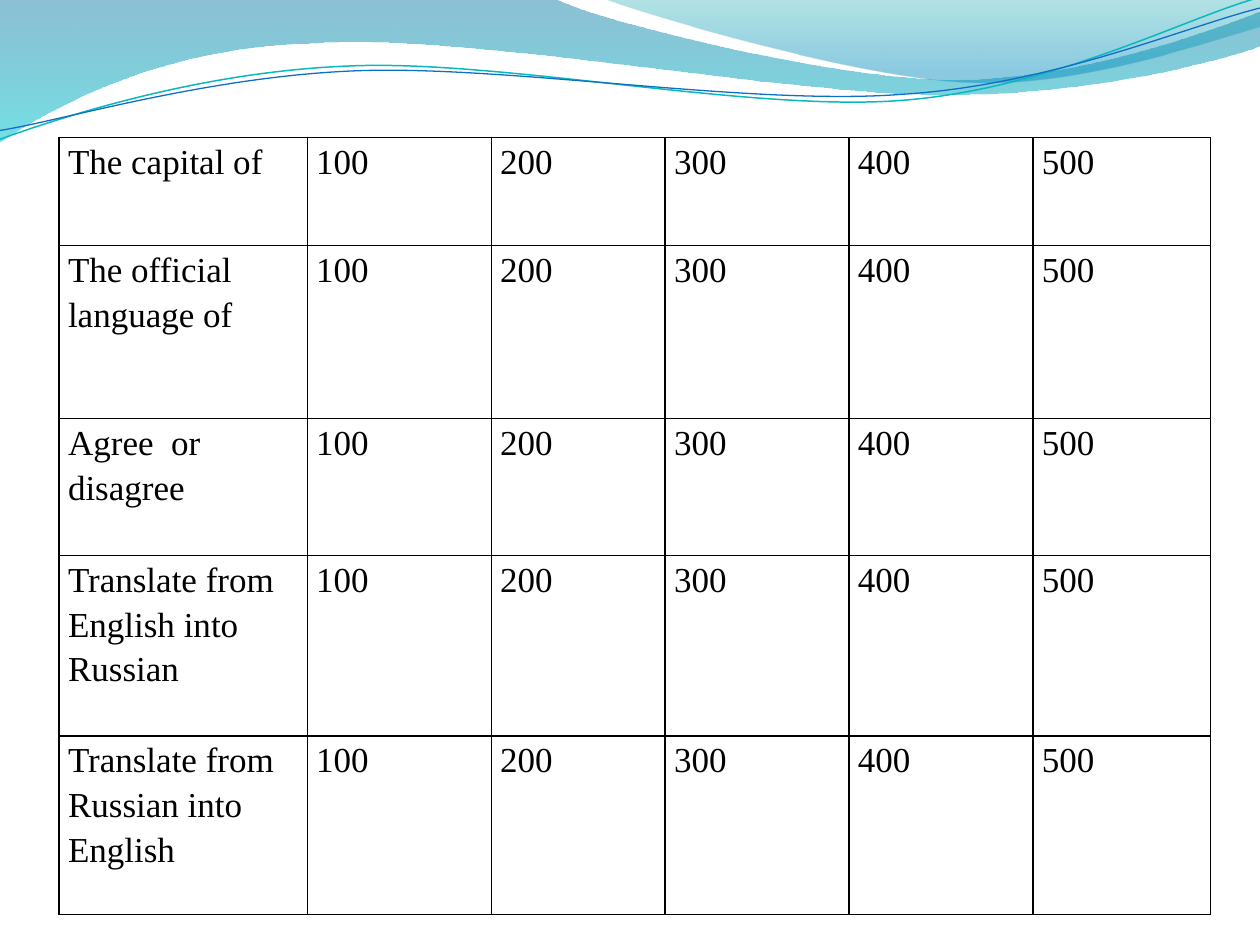
"""Build a quiz board slide with a table of points under a wave banner."""
from dataclasses import dataclass
from typing import Optional

import lxml.etree
import pptx
import pptx.dml.color
import pptx.oxml.ns
import pptx.util

Inches = pptx.util.Inches
RGBColor = pptx.dml.color.RGBColor
qn = pptx.oxml.ns.qn
Point = tuple[float, float]

BLACK = RGBColor(0x00, 0x00, 0x00)
DEEP_BLUE = RGBColor(0x00, 0x74, 0xA1)
CYAN = RGBColor(0x00, 0xC6, 0xCF)
TEAL = RGBColor(0x00, 0xA1, 0xA9)
SKY_BLUE = RGBColor(0x00, 0x8B, 0xBF)
LINE_TEAL = RGBColor(0x0A, 0xB8, 0xBF)
LINE_BLUE = RGBColor(0x0F, 0x6F, 0xC6)
BORDER = RGBColor(0x00, 0x00, 0x01)

FONT = "Times New Roman"
LINE_ROTATION = 357.3
TOPICS = (
    "The capital of",
    "The official language of",
    "Agree  or disagree",
    "Translate from English into Russian",
    "Translate from Russian into English",
)
POINTS = ("100", "200", "300", "400", "500")
COLUMN_WIDTHS = (1.97, 1.46, 1.38, 1.46, 1.46, 1.41)
ROW_HEIGHTS = (0.86, 1.37, 1.09, 1.43, 1.42)


@dataclass(frozen=True)
class Stop:
    position: float
    color: RGBColor
    opacity: int


@dataclass(frozen=True)
class Wave:
    """Segments hold one point for a straight line or three for a Bezier curve."""
    start: Point
    segments: tuple[tuple[Point, ...], ...]
    stops: tuple[Stop, ...] = ()
    line_color: Optional[RGBColor] = None
    line_width: float = 0


WAVES = (
    Wave(
        (0, 0),
        (
            ((4.4, -0.01),),
            ((4.76, 0.17), (6.64, 0.63), (7.58, 0.63)),
            ((8.53, 0.63), (9.58, 0.26), (10, 0.09)),
            ((10.01, 0.36),),
            ((9.83, 0.44), (8.7, 0.76), (7.46, 0.75)),
            ((6.22, 0.75), (3.82, 0.28), (2.57, 0.34)),
            ((1.29, 0.36), (0.46, 0.83), (-0.01, 1.13)),
            ((0, 0),),
        ),
        stops=(Stop(0, DEEP_BLUE, 45), Stop(1, CYAN, 55)),
    ),
    Wave(
        (4.79, -0.01),
        (
            ((5.09, 0.11), (6.82, 0.62), (7.69, 0.65)),
            ((8.56, 0.69), (9.61, 0.32), (10, 0.21)),
            ((10, 0),),
            ((4.79, -0.01),),
        ),
        stops=(Stop(0, TEAL, 30), Stop(0.8, SKY_BLUE, 45)),
    ),
    Wave(
        (-0.02, 0.87),
        (
            ((0.47, 0.72), (1.58, 0.41), (2.77, 0.42)),
            ((3.96, 0.42), (5.91, 0.93), (7.12, 0.9)),
            ((8.32, 0.87), (9.4, 0.36), (10, 0.22)),
        ),
        line_color=LINE_TEAL,
        line_width=0.85,
    ),
    Wave(
        (-0.02, 0.8),
        (
            ((0.46, 0.75), (1.64, 0.45), (2.83, 0.46)),
            ((4.03, 0.47), (5.96, 0.89), (7.16, 0.85)),
            ((8.35, 0.83), (9.42, 0.42), (10.02, 0.3)),
        ),
        line_color=LINE_BLUE,
        line_width=0.75,
    ),
)


def bend_segments(shape, wave: Wave) -> None:
    """Join the straight steps of each three-point segment into one curve."""
    steps = iter(list(shape._element.iter(qn("a:lnTo"))))
    for segment in wave.segments:
        first, *others = [next(steps) for _ in segment]
        if others:
            first.tag = qn("a:cubicBezTo")
        for other in others:
            first.append(other[0])
            other.getparent().remove(other)


def draw_wave(slide, wave: Wave) -> None:
    """Draw a gradient band or an open line."""
    points = [(Inches(x), Inches(y)) for segment in wave.segments for x, y in segment]
    builder = slide.shapes.build_freeform(*map(Inches, wave.start))
    builder.add_line_segments(points, close=bool(wave.stops))
    shape = builder.convert_to_shape()
    bend_segments(shape, wave)
    shape.shadow.inherit = False
    if not wave.stops:
        shape.rotation = LINE_ROTATION
        shape.fill.background()
        shape.line.color.rgb = wave.line_color
        shape.line.width = pptx.util.Pt(wave.line_width)
        return
    shape.line.fill.background()
    shape.fill.gradient()
    shape.fill.gradient_angle = 270
    for gradient_stop, stop in zip(shape.fill.gradient_stops, wave.stops):
        gradient_stop.position = stop.position
        gradient_stop.color.rgb = stop.color
    for element, stop in zip(shape._element.iter(qn("a:gs")), wave.stops):
        lxml.etree.SubElement(element[0], qn("a:alpha"), val=str(stop.opacity * 1000))


def set_borders(cell) -> None:
    """Give a cell a thin solid border on every side."""
    properties = cell._tc.get_or_add_tcPr()
    for index, side in enumerate(("lnL", "lnR", "lnT", "lnB")):
        border = lxml.etree.Element(qn(f"a:{side}"), w=str(pptx.util.Pt(1)))
        fill = lxml.etree.SubElement(border, qn("a:solidFill"))
        lxml.etree.SubElement(fill, qn("a:srgbClr"), val=str(BORDER))
        properties.insert(index, border)


def fill_cell(cell, text: str) -> None:
    """Write and format one cell."""
    cell.fill.background()
    set_borders(cell)
    cell.margin_left = cell.margin_right = Inches(0.07)
    cell.margin_top = cell.margin_bottom = 0
    cell.text_frame.text = text
    paragraph = cell.text_frame.paragraphs[0]
    paragraph.line_spacing = 1.15
    paragraph.space_after = pptx.util.Pt(7.5)
    font = paragraph.runs[0].font
    font.name = FONT
    font.size = pptx.util.Pt(20)
    font.color.rgb = BLACK


def draw_board(slide) -> None:
    """Draw the table of topics and points."""
    table = slide.shapes.add_table(
        len(ROW_HEIGHTS), len(COLUMN_WIDTHS), Inches(0.47), Inches(1.09),
        Inches(sum(COLUMN_WIDTHS)), Inches(sum(ROW_HEIGHTS)),
    ).table
    table.first_row = table.horz_banding = False
    for column, width in zip(table.columns, COLUMN_WIDTHS):
        column.width = Inches(width)
    for row, height, topic in zip(table.rows, ROW_HEIGHTS, TOPICS):
        row.height = Inches(height)
        for cell, text in zip(row.cells, (topic, *POINTS)):
            fill_cell(cell, text)


def main() -> None:
    """Build and save the presentation."""
    presentation = pptx.Presentation()
    presentation.slide_width, presentation.slide_height = Inches(10), Inches(7.5)
    slide = presentation.slides.add_slide(presentation.slide_layouts[6])
    for wave in WAVES:
        draw_wave(slide, wave)
    draw_board(slide)
    presentation.save("out.pptx")


if __name__ == "__main__":
    main()
